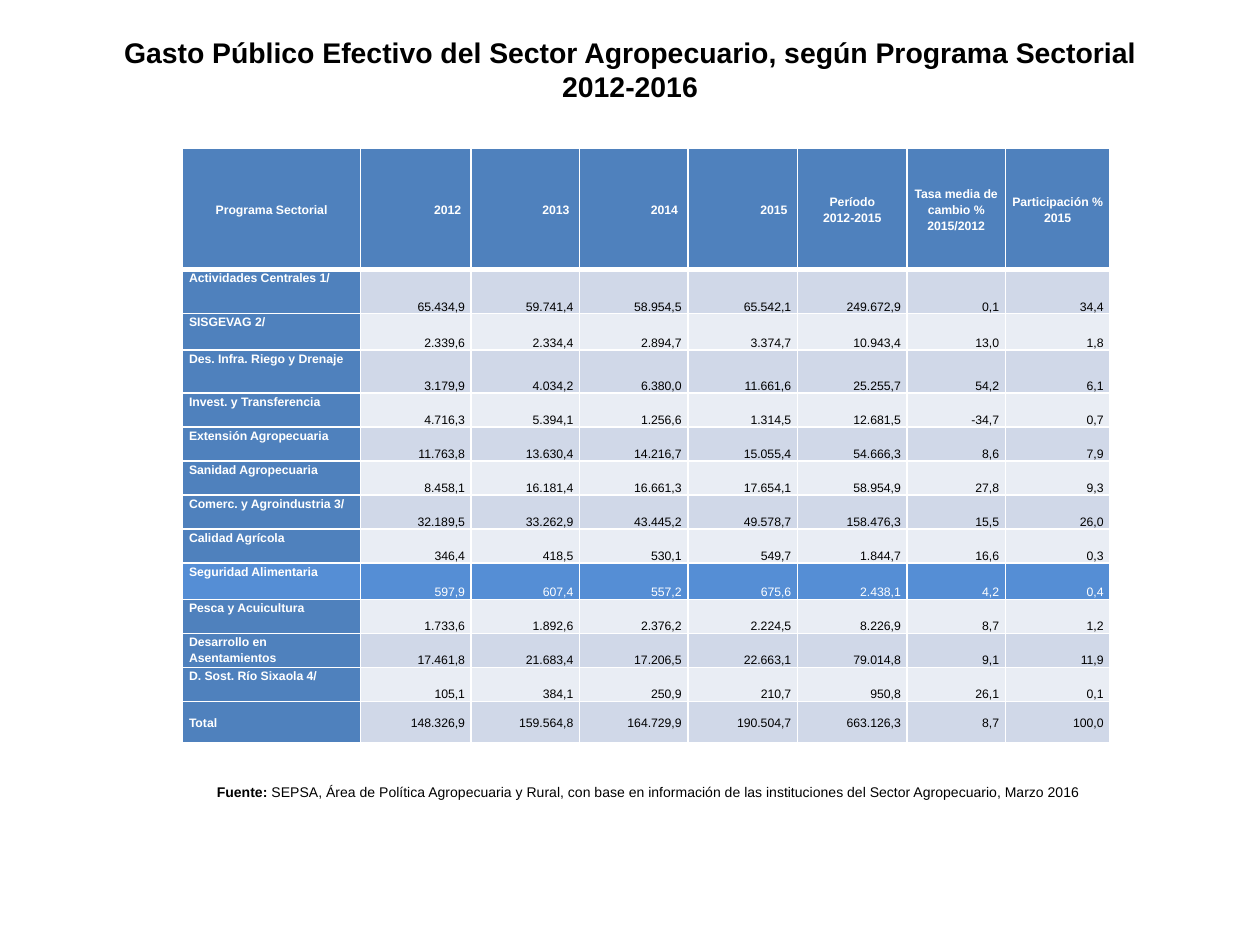
"""Builds a slide with public farm spending by sector programme."""
from lxml.etree import SubElement
from pptx import Presentation
from pptx.dml.color import RGBColor
from pptx.enum.text import MSO_ANCHOR as ANCHOR, PP_ALIGN as ALIGN
from pptx.oxml.ns import qn
from pptx.util import Inches, Pt

FONT = "Arial"
COLORS = {
    "black": "000000",
    "white": "FFFFFF",
    "header": "4F81BD",
    "highlight": "558ED5",
    "odd": "D0D8E8",
    "even": "E9EDF4",
}
COL_WIDTHS = [1.41, 0.88, 0.86, 0.86, 0.87, 0.87, 0.78, 0.83]
ROW_HEIGHTS = [0.96, 0.35, 0.29, 0.34] + [0.27] * 5 + [0.29] + [0.27] * 3 + [0.33]
HEADER = [
    "Programa Sectorial", "2012", "2013", "2014", "2015", "Período\v2012-2015",
    "Tasa media de cambio % 2015/2012", "Participación % 2015",
]
YEAR_COLS = range(1, 5)
HIGHLIGHTED = "Seguridad Alimentaria"
PROGRAMS = [
    ("Actividades Centrales 1/", "65.434,9 59.741,4 58.954,5 65.542,1 249.672,9 0,1 34,4"),
    ("SISGEVAG 2/", "2.339,6 2.334,4 2.894,7 3.374,7 10.943,4 13,0 1,8"),
    ("Des. Infra. Riego y Drenaje", "3.179,9 4.034,2 6.380,0 11.661,6 25.255,7 54,2 6,1"),
    ("Invest. y Transferencia", "4.716,3 5.394,1 1.256,6 1.314,5 12.681,5 -34,7 0,7"),
    ("Extensión Agropecuaria", "11.763,8 13.630,4 14.216,7 15.055,4 54.666,3 8,6 7,9"),
    ("Sanidad Agropecuaria", "8.458,1 16.181,4 16.661,3 17.654,1 58.954,9 27,8 9,3"),
    ("Comerc. y Agroindustria 3/", "32.189,5 33.262,9 43.445,2 49.578,7 158.476,3 15,5 26,0"),
    ("Calidad Agrícola", "346,4 418,5 530,1 549,7 1.844,7 16,6 0,3"),
    (HIGHLIGHTED, "597,9 607,4 557,2 675,6 2.438,1 4,2 0,4"),
    ("Pesca y Acuicultura", "1.733,6 1.892,6 2.376,2 2.224,5 8.226,9 8,7 1,2"),
    ("Desarrollo en Asentamientos", "17.461,8 21.683,4 17.206,5 22.663,1 79.014,8 9,1 11,9"),
    ("D. Sost. Río Sixaola 4/", "105,1 384,1 250,9 210,7 950,8 26,1 0,1"),
    ("Total", "148.326,9 159.564,8 164.729,9 190.504,7 663.126,3 8,7 100,0"),
]


def rgb(name):
    return RGBColor.from_string(COLORS[name])


def style_run(r, size, color, bold):
    r.font.name = FONT
    r.font.size = Pt(size)
    r.font.bold = bold
    r.font.color.rgb = rgb(color)


def add_text(slide, box, parts, size, anchor=ANCHOR.TOP):
    sp = slide.shapes.add_textbox(*(Inches(v) for v in box))
    tf = sp.text_frame
    tf.word_wrap = True
    tf.vertical_anchor = anchor
    p = tf.paragraphs[0]
    p.alignment = ALIGN.CENTER
    for i, (text, bold) in enumerate(parts):
        if i and text.startswith("\v"):
            p.add_line_break()
        r = p.add_run()
        r.text = text.lstrip("\v")
        style_run(r, size, "black", bold)


def set_borders(cell, widths):
    tc_pr = cell._tc.get_or_add_tcPr()
    for i, (tag, width) in enumerate(widths.items()):
        ln = SubElement(tc_pr, qn(f"a:{tag}"), w=str(Pt(width)))
        fill = SubElement(ln, qn("a:solidFill"))
        SubElement(fill, qn("a:srgbClr"), val=COLORS["white"])
        tc_pr.insert(i, ln)


def fill_cell(cell, text, fill, color, bold, align, anchor, right=0.05):
    cell.fill.solid()
    cell.fill.fore_color.rgb = rgb(fill)
    cell.margin_left, cell.margin_right = Inches(0.05), Inches(right)
    cell.margin_top = cell.margin_bottom = 0
    cell.vertical_anchor = anchor
    cell.text_frame.text = text
    p = cell.text_frame.paragraphs[0]
    p.alignment = align
    p.line_spacing = 1.15
    for r in p.runs:
        style_run(r, 7, color, bold)


def fill_header(table):
    for c, text in enumerate(HEADER):
        year = c in YEAR_COLS
        fill_cell(table.cell(0, c), text, "header", "white", True,
                  ALIGN.RIGHT if year else ALIGN.CENTER, ANCHOR.MIDDLE,
                  0.08 if year else 0.05)


def fill_program(table, row, name, values):
    highlighted, total = name == HIGHLIGHTED, name == "Total"
    band = "highlight" if highlighted else "odd" if row % 2 else "even"
    fill_cell(table.cell(row, 0), name, "highlight" if highlighted else "header",
              "white", True, ALIGN.LEFT, ANCHOR.MIDDLE if total else ANCHOR.TOP)
    for c, value in enumerate(values.split(), 1):
        fill_cell(table.cell(row, c), value, band,
                  "white" if highlighted else "black", False, ALIGN.RIGHT,
                  ANCHOR.MIDDLE if total else ANCHOR.BOTTOM)


def add_spending_table(slide):
    frame = slide.shapes.add_table(
        len(ROW_HEIGHTS), len(COL_WIDTHS), Inches(1.45), Inches(1.18),
        Inches(sum(COL_WIDTHS)), Inches(sum(ROW_HEIGHTS)))
    table = frame.table
    table.first_col = True
    for column, width in zip(table.columns, COL_WIDTHS):
        column.width = Inches(width)
    for row, height in zip(table.rows, ROW_HEIGHTS):
        row.height = Inches(height)
    fill_header(table)
    for i, (name, values) in enumerate(PROGRAMS, 1):
        fill_program(table, i, name, values)
    for i, row in enumerate(table.rows):
        for cell in row.cells:
            set_borders(cell, {"lnL": 1, "lnR": 1, "lnT": 3 if i == 1 else 1,
                               "lnB": 3 if i == 0 else 1})


def main():
    prs = Presentation()
    prs.slide_width, prs.slide_height = Inches(10), Inches(7.5)
    slide = prs.slides.add_slide(prs.slide_layouts[6])
    add_text(slide, (0.5, 0.3, 9, 0.49), [
        ("Gasto Público Efectivo del Sector Agropecuario, según Programa Sectorial", True),
        ("\v2012-2016", True),
    ], 16.2, ANCHOR.MIDDLE)
    add_spending_table(slide)
    add_text(slide, (1.15, 6.17, 8, 0.24), [
        ("Fuente:", True),
        (" SEPSA, Área de Política Agropecuaria y Rural, con base en información "
         "de las instituciones del Sector Agropecuario, Marzo 2016", False),
    ], 8)
    prs.save("out.pptx")


if __name__ == "__main__":
    main()
